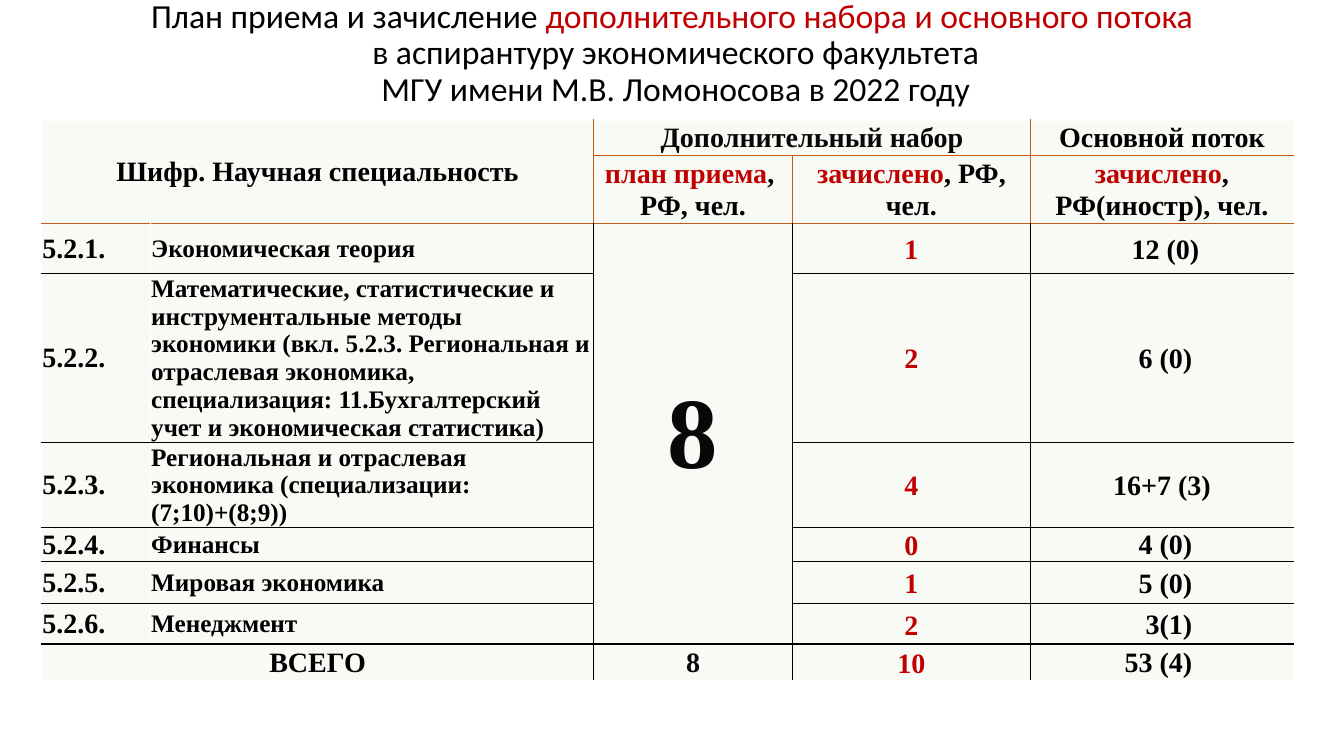
from lxml import etree
from pptx import Presentation
from pptx import util as u
from pptx.dml.color import RGBColor
from pptx.enum import text
from pptx.oxml import ns

COLORS = {"black": "000000", "ink": "080808", "red": "C00000",
          "orange": "C55A11", "white": "FFFFFF", "mint": "E2F0D9"}
TITLE_FONT, TABLE_FONT = "Calibri", "Times New Roman"
BREAK = "\v"

TITLE = [
    ("План приема и зачисление ", "black"),
    ("дополнительного набора и основного потока", "red"),
    (BREAK, "red"),
    (" в аспирантуру экономического факультета", "black"),
    (BREAK, "black"),
    (" МГУ имени М.В. Ломоносова в 2022 году", "black"),
]

# Header cells: (row, column) -> paragraphs made of (words, color) spans
HEADER = {
    (0, 0): [[("Шифр. Научная специальность", "black")]],
    (0, 2): [[("Дополнительный набор", "ink")]],
    (0, 4): [[("Основной поток", "black")]],
    (1, 2): [[("план приема", "red"), (", ", "black")], [("РФ, чел.", "black")]],
    (1, 3): [[("зачислено", "red"), (", РФ, чел.", "black")]],
    (1, 4): [[("зачислено", "red"), (", РФ(иностр), чел.", "black")]],
}

# Code, specialty, planned, enrolled in the extra intake, enrolled in the main one
BODY = [
    ("5.2.1.", "Экономическая теория", "8", "1", " 12 (0)"),
    ("5.2.2.", "Математические, статистические и инструментальные методы экономики "
     "(вкл. 5.2.3. Региональная и отраслевая экономика, специализация: "
     "11.Бухгалтерский учет и экономическая статистика)", "", "2", " 6 (0)"),
    ("5.2.3.", "Региональная и отраслевая экономика (специализации: (7;10)+(8;9))",
     "", "4", "16+7 (3)"),
    ("5.2.4.", "Финансы", "", "0", " 4 (0)"),
    ("5.2.5.", "Мировая экономика", "", "1", " 5 (0)"),
    ("5.2.6.", "Менеджмент", "", "2", "  3(1)"),
    ("ВСЕГО", "", "8", "10", "53 (4) "),
]

COLUMN_WIDTHS = [1.08, 4.4, 1.97, 2.36, 2.61]
ROW_HEIGHTS = [0.35, 0.68, 0.49, 1.68, 0.84, 0.33, 0.42, 0.4, 0.36]
HEADER_ROWS = 2
LAST_ROW, LAST_COLUMN = len(ROW_HEIGHTS) - 1, len(COLUMN_WIDTHS) - 1
# First row, first column, last row, last column
MERGES = [(0, 0, 1, 1), (0, 2, 0, 3), (2, 2, 7, 2), (8, 0, 8, 1)]

COLUMN_COLORS = ["black", "black", "ink", "red", "black"]
COLUMN_SIZES = [20, 18, 20, 20, 20]
COLUMN_MARGINS = [(0.01, 0.01)] * 3 + [(0.06, 0.01), (0.07, 0)]


def write_spans(para, spans, font, size, bold):
    for words, color in spans:
        if words == BREAK:
            para.add_line_break()
            etree.SubElement(para._p[-1], ns.qn("a:rPr"), sz=str(size * 100))
            continue
        span = para.add_run()
        span.text = words
        span.font.name, span.font.size, span.font.bold = font, u.Pt(size), bold
        span.font.color.rgb = RGBColor.from_string(COLORS[color])


def merge_box(row, column):
    for top, left, bottom, right in MERGES:
        if top <= row <= bottom and left <= column <= right:
            return top, left, bottom, right
    return row, column, row, column


def edge_colors(row, column):
    """Give the border color of each side; sides inside a merged cell are left out."""
    top, left, bottom, right = merge_box(row, column)
    rule = "orange" if top < HEADER_ROWS else "black"
    colors = {
        "L": "white" if left == 0 or left == 1 else rule,
        "R": "white" if right in (0, LAST_COLUMN) else rule,
        "T": "white" if top == 0 else "orange" if top <= HEADER_ROWS else "black",
        "B": "white" if bottom == LAST_ROW else rule,
    }
    on_edge = {"L": column == left, "R": column == right,
               "T": row == top, "B": row == bottom}
    is_origin = (row, column) == (top, left)
    return {side: color for side, color in colors.items() if is_origin or on_edge[side]}


def paint_cell(cell, row, column):
    cell.fill.solid()
    cell.fill.fore_color.rgb = RGBColor.from_string(COLORS["mint"])
    properties = cell._tc.get_or_add_tcPr()
    fill_color = properties.find(".//" + ns.qn("a:srgbClr"))
    etree.SubElement(fill_color, ns.qn("a:alpha"), val="24000")
    for index, (side, color) in enumerate(edge_colors(row, column).items()):
        line = etree.Element(ns.qn(f"a:ln{side}"), w=str(u.Pt(1)))
        solid = etree.SubElement(line, ns.qn("a:solidFill"))
        etree.SubElement(solid, ns.qn("a:srgbClr"), val=COLORS[color])
        properties.insert(index, line)


def fill_cell(cell, row, column):
    in_body = row >= HEADER_ROWS
    side, top = COLUMN_MARGINS[column] if in_body else COLUMN_MARGINS[0]
    cell.margin_left = cell.margin_right = u.Inches(side)
    cell.margin_top, cell.margin_bottom = u.Inches(top), 0
    cell.vertical_anchor = text.MSO_ANCHOR.MIDDLE
    size = 20
    if in_body:
        paragraphs = [[(BODY[row - HEADER_ROWS][column], COLUMN_COLORS[column])]]
        size = COLUMN_SIZES[column] if row < LAST_ROW else 20
        if (row, column) == (HEADER_ROWS, 2):
            size = 72
    else:
        paragraphs = HEADER[row, column]
    for index, spans in enumerate(paragraphs):
        frame = cell.text_frame
        para = frame.add_paragraph() if index else frame.paragraphs[0]
        is_label = in_body and column < 2 and row < LAST_ROW
        para.alignment = text.PP_ALIGN.LEFT if is_label else text.PP_ALIGN.CENTER
        if in_body and column >= 3:
            para.line_spacing = 1.07
            para.space_after = u.Pt(8 if column == 3 else 0)
        write_spans(para, spans, TABLE_FONT, size, True)


def add_title(page, deck):
    title = page.shapes.title
    title.left, title.top = 0, u.Inches(0.02)
    title.width, title.height = deck.slide_width, u.Inches(1.03)
    frame = title.text_frame
    frame.auto_size = text.MSO_AUTO_SIZE.NONE
    frame.word_wrap = True
    frame.vertical_anchor = text.MSO_ANCHOR.MIDDLE
    para = frame.paragraphs[0]
    para.alignment, para.line_spacing = text.PP_ALIGN.CENTER, 0.9
    para.space_before = u.Pt(0)
    write_spans(para, TITLE, TITLE_FONT, 24, False)


def add_admission_table(page):
    table = page.shapes.add_table(
        len(ROW_HEIGHTS), len(COLUMN_WIDTHS), u.Inches(0.41), u.Inches(1.19),
        u.Inches(sum(COLUMN_WIDTHS)), u.Inches(sum(ROW_HEIGHTS))).table
    table.first_row = table.horz_banding = False
    for column, width in zip(table.columns, COLUMN_WIDTHS):
        column.width = u.Inches(width)
    for row, height in zip(table.rows, ROW_HEIGHTS):
        row.height = u.Inches(height)
    for top, left, bottom, right in MERGES:
        table.cell(top, left).merge(table.cell(bottom, right))
    for row in range(len(ROW_HEIGHTS)):
        for column in range(len(COLUMN_WIDTHS)):
            cell = table.cell(row, column)
            paint_cell(cell, row, column)
            if not cell.is_spanned:
                fill_cell(cell, row, column)


def main():
    deck = Presentation()
    deck.slide_width, deck.slide_height = u.Inches(13.33), u.Inches(7.5)
    page = deck.slides.add_slide(deck.slide_layouts[5])
    add_title(page, deck)
    add_admission_table(page)
    deck.save("out.pptx")


if __name__ == "__main__":
    main()
